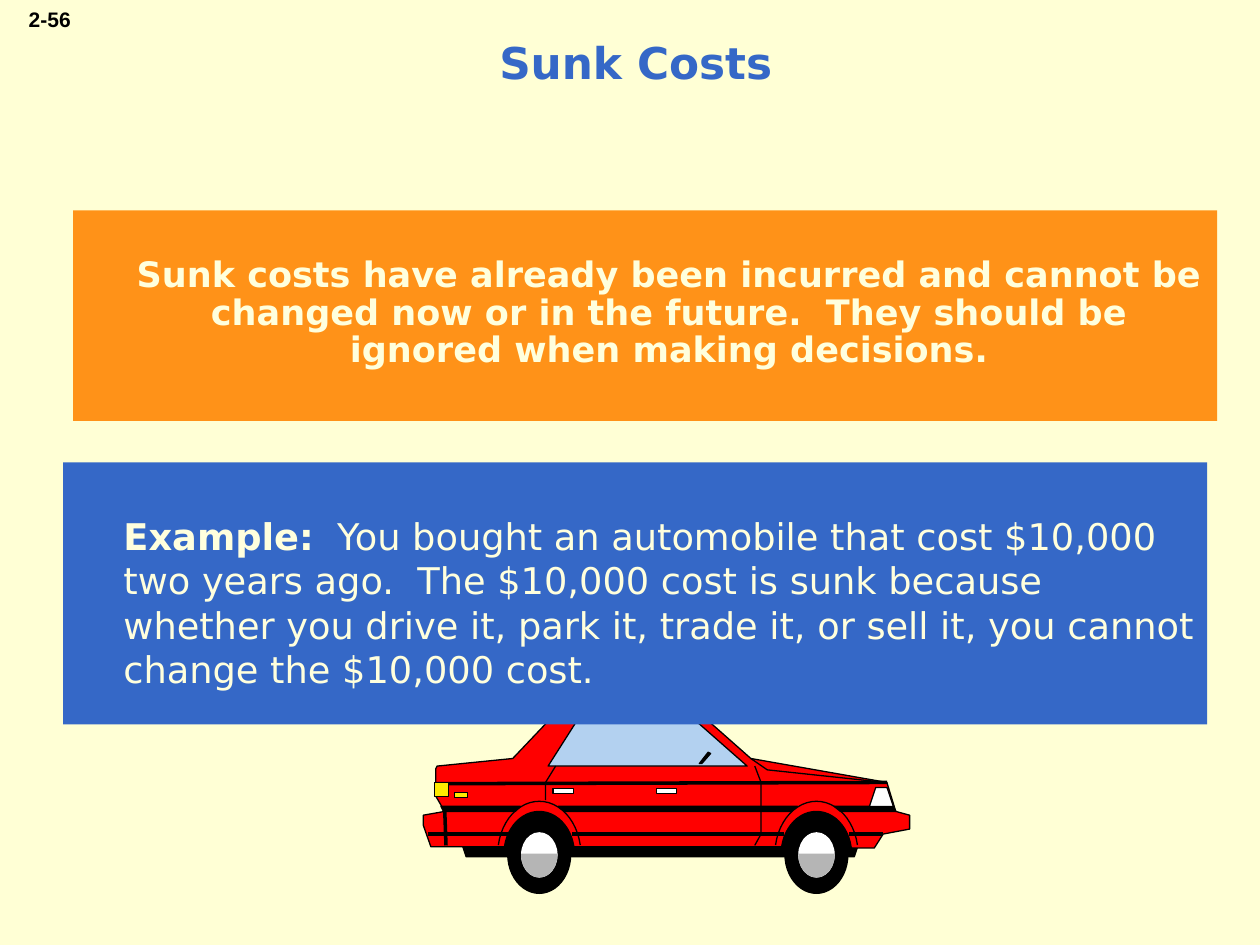
import math

import pptx
import pptx.dml.color
import pptx.enum.shapes
import pptx.enum.text
import pptx.oxml
import pptx.util
from pptx.util import Inches

COLORS = {
    "background": "FFFFD5", "title": "3568C7", "black": "000000", "white": "FFFFFF",
    "cream": "FFFFDD", "orange": "FF9218", "blue": "3568C7", "red": "FF0000",
    "yellow": "FFEA00", "glass": "B3D1F0", "gray": "B5B5B5",
}
ALIGN = pptx.enum.text.PP_ALIGN
ANCHOR = pptx.enum.text.MSO_ANCHOR
SHAPE = pptx.enum.shapes.MSO_SHAPE


def color(name):
    """Return the named colour."""
    return pptx.dml.color.RGBColor.from_string(COLORS[name])


def paint(shape, fill=None, line=None):
    """Set the fill and hairline of a shape, with no shadow."""
    shape.shadow.inherit = False
    if fill:
        shape.fill.solid()
        shape.fill.fore_color.rgb = color(fill)
    else:
        shape.fill.background()
    if line:
        shape.line.color.rgb = color(line)
        shape.line.width = pptx.util.Pt(0)
    else:
        shape.line.fill.background()
    return shape


def write_text(shape, *pieces, size=20, font="DejaVu Sans", ink="cream", align=ALIGN.LEFT,
               anchor=ANCHOR.TOP, spacing=1.0, inset_left=0.1, inset_top=0.05, wrap=True):
    """Write one paragraph of (text, bold) pieces into a shape."""
    frame = shape.text_frame
    frame.word_wrap = wrap
    frame.vertical_anchor = anchor
    frame.margin_left, frame.margin_top = Inches(inset_left), Inches(inset_top)
    frame.margin_right, frame.margin_bottom = Inches(0.1), Inches(0.05)
    paragraph = frame.paragraphs[0]
    paragraph.alignment = align
    paragraph.line_spacing = spacing
    for text, bold in pieces:
        run = paragraph.add_run()
        run.text = text
        run.font.name = font
        run.font.size = pptx.util.Pt(size)
        run.font.bold = bold
        run.font.color.rgb = color(ink)


def add_heading(slide, left, top, width, height):
    """Add the page number and the centred title."""
    number = slide.shapes.add_textbox(Inches(left - 0.06), Inches(top - 0.08),
                                      Inches(0.55), Inches(0.3))
    write_text(number, ("2-56", True), size=12, font="Arial", ink="black",
               align=ALIGN.RIGHT, wrap=False)
    title = slide.shapes.add_textbox(Inches(left), Inches(top), Inches(width), Inches(height))
    write_text(title, ("Sunk Costs", True), size=25, ink="title",
               align=ALIGN.CENTER, anchor=ANCHOR.MIDDLE)


def add_panel(slide, left, top, width, height, fill, *pieces, **text_format):
    """Add a filled rectangle with a paragraph of text."""
    panel = slide.shapes.add_shape(SHAPE.RECTANGLE, Inches(left), Inches(top),
                                   Inches(width), Inches(height))
    paint(panel, fill)
    write_text(panel, *pieces, inset_left=0.48, **text_format)


def arc(center_x, center_y, radius_x, radius_y, start, end, steps=24):
    """Return points along an elliptical arc, with angles in degrees."""
    angles = [math.radians(start + (end - start) * step / steps) for step in range(steps + 1)]
    return [(center_x + radius_x * math.cos(angle), center_y - radius_y * math.sin(angle))
            for angle in angles]


def add_car(slide, left, top):
    """Draw the car from its top left corner."""
    shapes = slide.shapes.add_group_shape().shapes

    def outline(points, fill=None, line="black"):
        """Draw a closed filled outline, or an open line without fill."""
        places = [(Inches(left + x), Inches(top + y)) for x, y in points]
        builder = shapes.build_freeform(*places[0])
        builder.add_line_segments(places[1:], close=fill is not None)
        paint(builder.convert_to_shape(), fill, line)

    def preset(kind, x, y, width, height, fill, line="black"):
        """Draw a preset shape."""
        paint(shapes.add_shape(kind, Inches(left + x), Inches(top + y),
                               Inches(width), Inches(height)), fill, line)

    def seam(x1, y1, x2, y2):
        """Draw a straight hairline."""
        connector = shapes.add_connector(
            pptx.enum.shapes.MSO_CONNECTOR.STRAIGHT, Inches(left + x1), Inches(top + y1),
            Inches(left + x2), Inches(top + y2))
        connector.line.color.rgb = color("black")
        connector.line.width = pptx.util.Pt(0)
        connector._element.spPr.append(pptx.oxml.parse_xml(
            '<a:effectLst xmlns:a="http://schemas.openxmlformats.org/drawingml/2006/main"/>'))

    wheels, axle = (0.92, 3.12), 1.2
    rear_arch, front_arch = [arc(x, axle, 0.28, 0.34, 10, 170) for x in wheels]

    outline([(0.34, 1.22), (0.21, 0.83), (3.55, 0.83), (3.42, 1.22)], "black")
    outline(rear_arch + [
        (0.06, 1.14), (0, 0.97), (0, 0.89), (0.17, 0.86), (0.1, 0.74), (0.1, 0.52),
        (0.11, 0.5), (0.71, 0.44), (1.09, 0.04), (1.33, 0), (2.03, 0), (2.12, 0.03),
        (2.17, 0.06), (2.6, 0.44), (3.68, 0.63), (3.75, 0.86), (3.86, 0.89), (3.86, 1),
        (3.65, 1.04), (3.58, 1.15), (3.4, 1.15)] + front_arch, "red")
    seam(3.68, 0.63, 0.1, 0.64)
    for x in wheels:
        outline(arc(x, axle, 0.33, 0.42, 10, 170))
    for start, end in ((3.65, 3.38), (2.86, 1.18), (0.67, 0.04)):
        seam(start, 1.04, end, 1.04)

    for x1, x2, x3, x4 in ((0.16, 0.73, 0.77, 0.14), (1.12, 2.92, 2.97, 1.07),
                           (3.31, 3.75, 3.73, 3.26)):
        outline([(x1, 0.86), (x2, 0.86), (x3, 0.82), (x4, 0.82)], "black")
    outline([(3.68, 0.67), (3.59, 0.67), (3.54, 0.82), (3.73, 0.82)], "white")
    preset(SHAPE.RECTANGLE, 0.09, 0.63, 0.11, 0.11, "yellow")
    preset(SHAPE.RECTANGLE, 0.25, 0.71, 0.1, 0.04, "yellow")
    outline([(0.99, 0.5), (2.57, 0.5), (2.07, 0.06), (1.27, 0.06)], "glass")
    outline([(2.19, 0.48), (2.26, 0.39), (2.28, 0.4), (2.21, 0.48)], "black")
    outline([(1.05, 0.5), (0.97, 0.63), (0.97, 0.77)])
    outline([(2.63, 0.5), (2.68, 0.63), (2.68, 1.04), (2.63, 1.13)])
    for x in (1.03, 1.85):
        preset(SHAPE.RECTANGLE, x, 0.68, 0.16, 0.04, "white")
    outline([(2.6, 0.44), (2.73, 0.53), (3.67, 0.63)])
    seam(0.17, 0.86, 0.18, 1.13)

    for x in wheels:
        preset(SHAPE.OVAL, x - 0.25, axle - 0.31, 0.5, 0.62, "black")
        preset(SHAPE.OVAL, x - 0.14, axle - 0.17, 0.28, 0.35, "white", "white")
        outline(arc(x, axle, 0.14, 0.18, 180, 360), "gray", "gray")


def main():
    """Build and save the slide."""
    presentation = pptx.Presentation()
    presentation.slide_width, presentation.slide_height = Inches(10), Inches(7.5)
    slide = presentation.slides.add_slide(presentation.slide_layouts[6])
    slide.background.fill.solid()
    slide.background.fill.fore_color.rgb = color("background")
    add_heading(slide, 0.17, 0.08, 9.75, 0.83)
    add_panel(slide, 0.58, 1.67, 9.08, 1.67, "orange",
              ("Sunk costs have already been incurred and cannot be changed now or in the "
               "future.  They should be ignored when making decisions.", True),
              align=ALIGN.CENTER, spacing=0.9, inset_top=0.37)
    add_car(slide, 3.36, 5.58)
    add_panel(slide, 0.5, 3.67, 9.08, 2.08, "blue",
              ("Example:", True),
              ("  You bought an automobile that cost $10,000 two years ago.  The $10,000 cost "
               "is sunk because whether you drive it, park it, trade it, or sell it, you "
               "cannot change the $10,000 cost.", False),
              size=21, inset_top=0.41)
    presentation.save("out.pptx")


if __name__ == "__main__":
    main()
